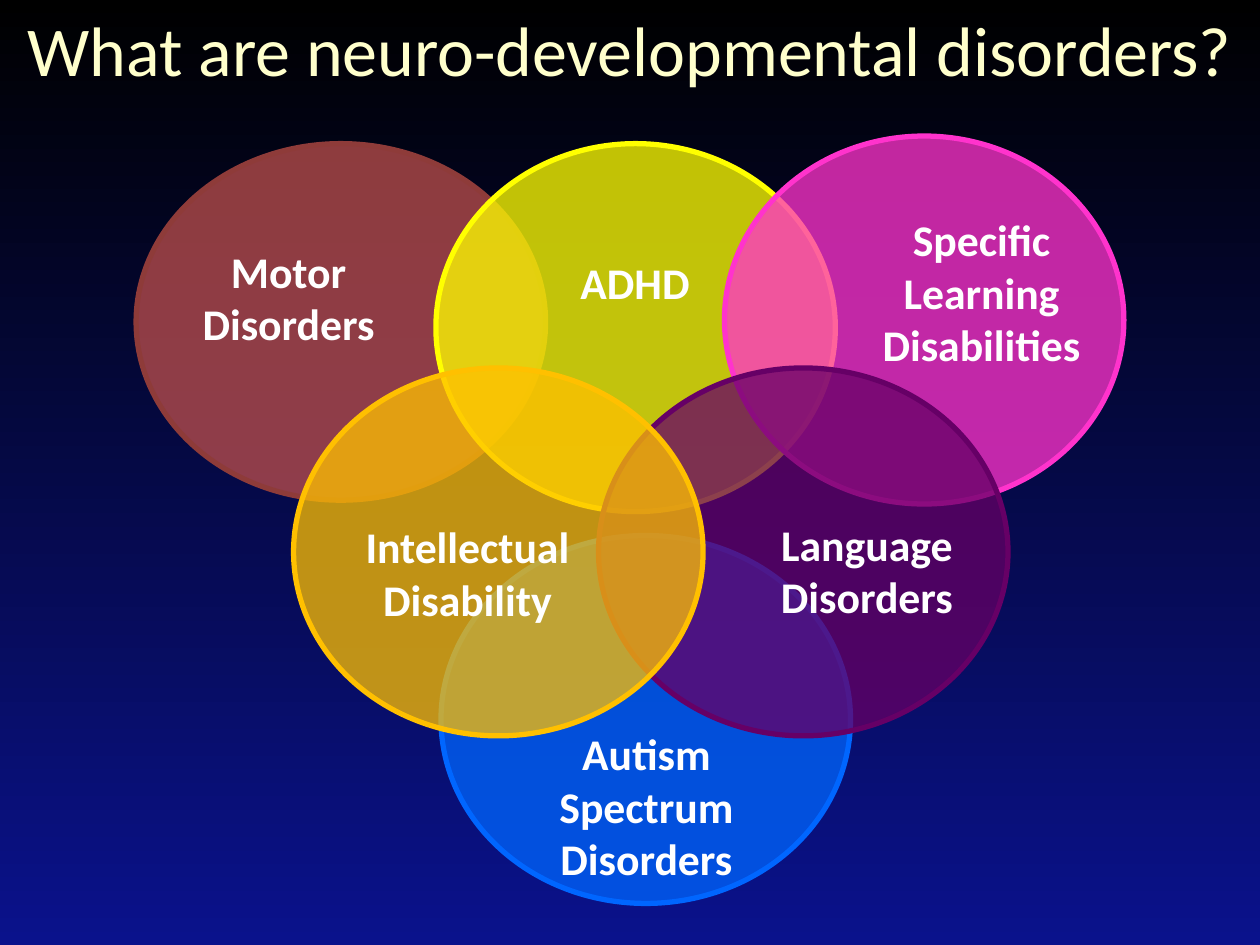
from typing import NamedTuple

from lxml import etree
from pptx import Presentation
from pptx.dml.color import RGBColor
from pptx.enum.shapes import MSO_SHAPE as Shape
from pptx.enum.text import MSO_ANCHOR as Anchor, PP_ALIGN as Align
from pptx.oxml.ns import qn
from pptx.util import Inches, Pt

LABEL_WIDTH = 1.92
LABEL_LINE = 0.42
LABEL_PADDING = 0.1


class Disorder(NamedTuple):
    left: float
    top: float
    width: float
    height: float
    fill: str
    opacity: int
    outline: str


class Label(NamedTuple):
    text: str
    left: float
    top: float
    lines: int


# Back to front: the overlaps depend on this order.
DISORDERS = [
    Disorder(1.08, 1.14, 3.25, 2.83, "C0504D", 74, "8E3B39"),
    Disorder(3.46, 1.14, 3.17, 2.92, "FFFF00", 76, "FFFF00"),
    Disorder(3.5, 4.25, 3.25, 2.92, "0066FF", 75, "0066FF"),
    Disorder(5.75, 1.08, 3.17, 2.92, "FF33CC", 76, "FF33CC"),
    Disorder(4.75, 2.92, 3.25, 2.92, "660066", 75, "660066"),
    Disorder(2.33, 2.92, 3.25, 2.92, "FFC000", 75, "FFC000"),
]

LABELS = [
    Label("Autism\nSpectrum\nDisorders", 4.17, 5.72, 3),
    Label("Specific\nLearning\nDisabilities", 6.83, 1.64, 3),
    Label("ADHD", 4.08, 1.98, 1),
    Label("Language Disorders", 5.92, 4.06, 2),
    Label("Intellectual\nDisability", 2.75, 4.08, 2),
    Label("Motor\nDisorders", 1.33, 1.89, 2),
]


def rgb(value: str) -> RGBColor:
    return RGBColor.from_string(value)


def add_text(slide, text: str, left: float, top: float, width: float, height: float, *,
             size: float, color: str, bold: bool = False) -> None:
    box = slide.shapes.add_textbox(Inches(left), Inches(top), Inches(width), Inches(height))
    frame = box.text_frame
    frame.word_wrap = True
    frame.vertical_anchor = Anchor.TOP
    frame.text = text
    for paragraph in frame.paragraphs:
        paragraph.alignment = Align.CENTER
        for run in paragraph.runs:
            run.font.name = "Calibri"
            run.font.size = Pt(size)
            run.font.bold = bold
            run.font.color.rgb = rgb(color)


def add_disorder(slide, disorder: Disorder) -> None:
    ellipse = slide.shapes.add_shape(
        Shape.OVAL, Inches(disorder.left), Inches(disorder.top),
        Inches(disorder.width), Inches(disorder.height))
    ellipse.shadow.inherit = False
    ellipse.fill.solid()
    ellipse.fill.fore_color.rgb = rgb(disorder.fill)
    fill_color = ellipse.fill._xPr.find(qn("a:solidFill"))[0]
    etree.SubElement(fill_color, qn("a:alpha"), val=str(disorder.opacity * 1000))
    ellipse.line.color.rgb = rgb(disorder.outline)
    ellipse.line.width = Pt(3)


def set_background(slide, top_color: str, bottom_color: str) -> None:
    fill = slide.background.fill
    fill.gradient()
    fill.gradient_angle = 270
    for stop, position, color in zip(fill.gradient_stops, (0, 1), (top_color, bottom_color)):
        stop.position = position
        stop.color.rgb = rgb(color)


def main() -> None:
    deck = Presentation()
    deck.slide_width, deck.slide_height = Inches(10), Inches(7.5)
    slide = deck.slides.add_slide(deck.slide_layouts[6])
    set_background(slide, "000000", "0A128C")
    add_text(slide, "What are neuro-developmental disorders?", 0, 0, 10, 1,
             size=40, color="FFFFCC")
    for disorder in DISORDERS:
        add_disorder(slide, disorder)
    for label in LABELS:
        add_text(slide, label.text, label.left, label.top, LABEL_WIDTH,
                 label.lines * LABEL_LINE + LABEL_PADDING,
                 size=25, color="FFFFFF", bold=True)
    deck.save("out.pptx")


if __name__ == "__main__":
    main()
